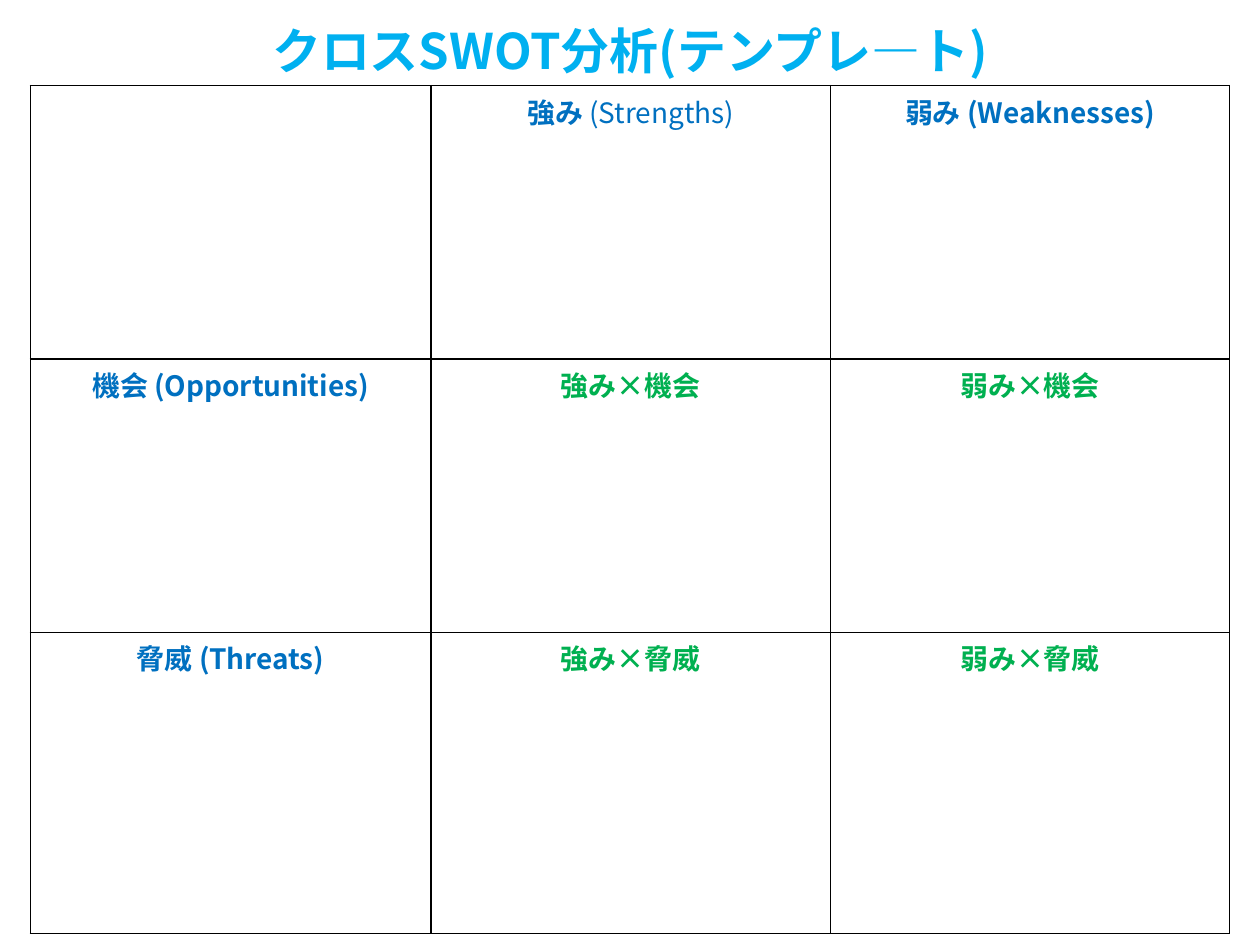
from dataclasses import dataclass
from lxml.etree import SubElement
from pptx import Presentation
from pptx.dml.color import RGBColor as Rgb
from pptx.enum.text import MSO_ANCHOR as Anchor, MSO_AUTO_SIZE as AutoSize, PP_ALIGN as Align
from pptx.oxml.ns import qn
from pptx.util import Inches, Pt


@dataclass(frozen=True)
class Theme:
    font: str = "Noto Sans CJK JP"
    title_size: int = 28
    cell_size: int = 16
    title: str = "00B0F0"
    factor: str = "0070C0"
    cross: str = "00B050"
    paper: str = "FFFFFF"
    border: str = "000000"
    border_width: int = 1
    cell_margin: float = 0.04


class SwotSlide:
    def __init__(self, slide, theme):
        self.slide = slide
        self.theme = theme

    def add_phrases(self, paragraph, phrases, size, color):
        paragraph.alignment = Align.CENTER
        for words, bold in phrases:
            run = paragraph.add_run()
            run.text = words
            style = {"name": self.theme.font, "size": Pt(size), "bold": bold}
            for key, value in style.items():
                setattr(run.font, key, value)
            run.font.color.rgb = Rgb.from_string(color)
            SubElement(run._r.get_or_add_rPr(), qn("a:ea"), typeface=self.theme.font)

    def heading(self, words, left, top, width, height):
        heading = self.slide.shapes.add_textbox(*map(Inches, (left, top, width, height)))
        frame = heading.text_frame
        for key, value in {"word_wrap": True, "auto_size": AutoSize.SHAPE_TO_FIT_TEXT}.items():
            setattr(frame, key, value)
        self.add_phrases(frame.paragraphs[0], [(words, True)], self.theme.title_size, self.theme.title)

    def outline(self, cell):
        properties = cell._tc.get_or_add_tcPr()
        for place, side in enumerate(("lnL", "lnR", "lnT", "lnB")):
            line = SubElement(properties, qn(f"a:{side}"), w=str(Pt(self.theme.border_width)))
            fill = SubElement(line, qn("a:solidFill"))
            SubElement(fill, qn("a:srgbClr"), val=self.theme.border)
            properties.insert(place, line)

    def fill_cell(self, cell, phrases, color):
        margin = Inches(self.theme.cell_margin)
        layout = {f"margin_{side}": margin for side in ("left", "right", "top", "bottom")}
        layout["vertical_anchor"] = Anchor.TOP
        for key, value in layout.items():
            setattr(cell, key, value)
        cell.fill.solid()
        cell.fill.fore_color.rgb = Rgb.from_string(self.theme.paper)
        self.outline(cell)
        self.add_phrases(cell.text_frame.paragraphs[0], phrases, self.theme.cell_size, color)

    def matrix(self, rows, left, top, widths, heights):
        bounds = (left, top, sum(widths), sum(heights))
        table = self.slide.shapes.add_table(len(heights), len(widths), *map(Inches, bounds)).table
        for key in ("first_row", "horz_banding"):
            setattr(table, key, False)
        for column, width in zip(table.columns, widths):
            column.width = Inches(width)
        for row, height in zip(table.rows, heights):
            row.height = Inches(height)
        for r, row in enumerate(rows):
            for c, phrases in enumerate(row):
                color = self.theme.cross if r and c else self.theme.factor
                self.fill_cell(table.cell(r, c), phrases, color)


def main():
    deck = Presentation()
    deck.slide_width, deck.slide_height = Inches(10), Inches(7.5)
    swot = SwotSlide(deck.slides.add_slide(deck.slide_layouts[6]), Theme())

    strength, weakness = "強み", "弱み"
    external = {"機会": "Opportunities", "脅威": "Threats"}
    rows = [[[], [(f"{strength} ", True), ("(Strengths)", False)],
             [(f"{weakness} (Weaknesses)", True)]]]
    for factor, english in external.items():
        crosses = [[(f"{internal}×{factor}", True)] for internal in (strength, weakness)]
        rows.append([[(f"{factor} ({english})", True)], *crosses])

    swot.matrix(rows, 0.24, 0.68, (3.18, 3.17, 3.17), (2.17, 2.17, 2.39))
    swot.heading("クロスSWOT分析(テンプレ―ト)", 0, 0.11, 10, 0.57)
    deck.save("out.pptx")


if __name__ == "__main__":
    main()
